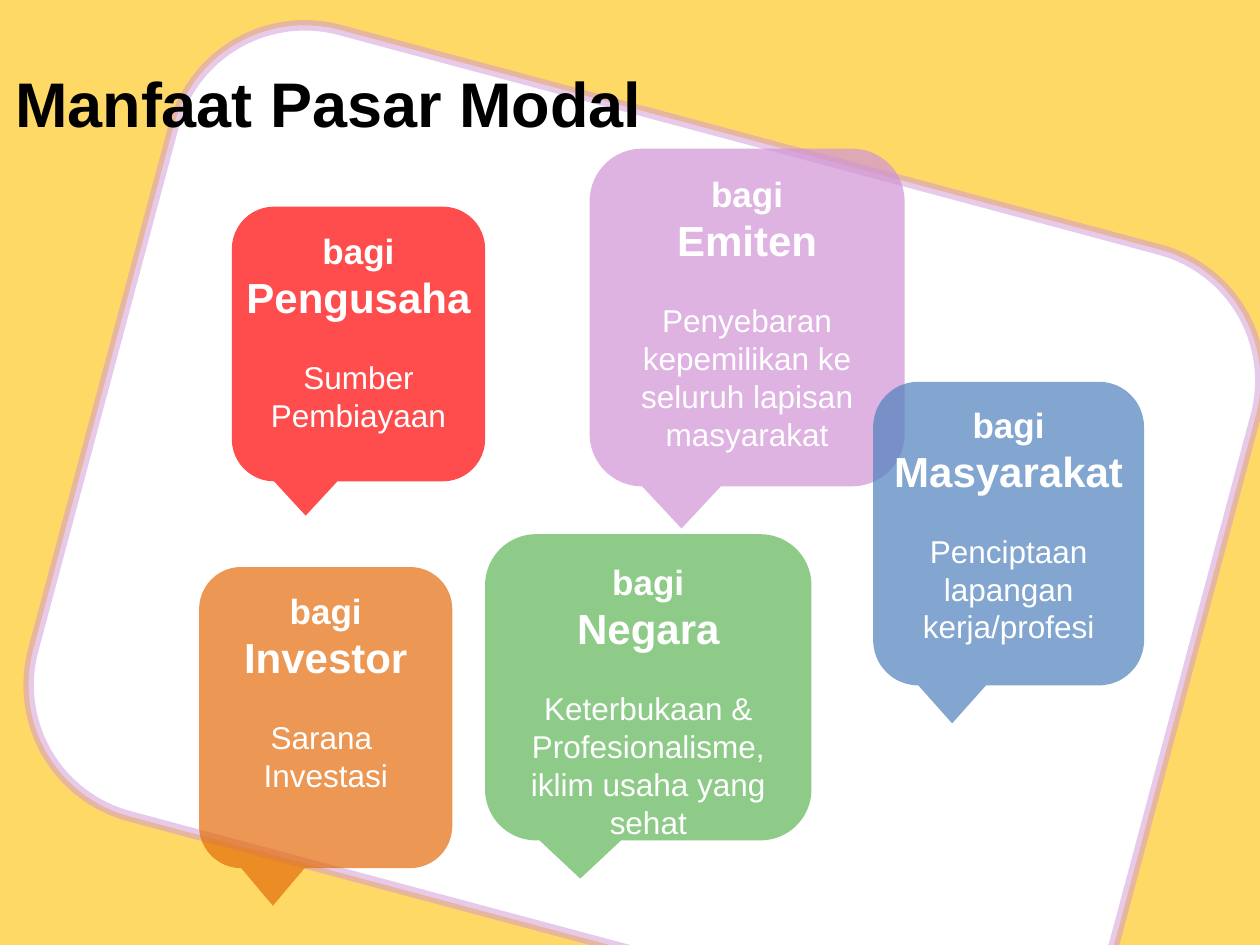
from pptx import Presentation, util as u
from pptx.dml.color import RGBColor
from pptx.enum import shapes, text
from pptx.oxml.ns import qn
from lxml import etree

PX = 9144  # EMU per px, 100 px to the inch
COLOURS = {
    "background": "FFD966", "white": "FFFFFF", "black": "000000",
    "red": "FF0000", "orange": "E46C0A", "lilac": "D094D6",
    "green": "5FB557", "blue": "4F81BD",
}


class SlideBuilder:
    font = "Arial"

    def __init__(self, slide):
        self.slide = slide

    def colour(self, name):
        return RGBColor.from_string(COLOURS[name])

    def place(self, left, top, width, height):
        return [u.Emu(value * PX) for value in (left, top, width, height)]

    def paint(self, fill, name, opacity=100):
        fill.solid()
        fill.fore_color.rgb = self.colour(name)
        if opacity < 100:
            # The public API has no transparency setting
            solid = fill._xPr.find(qn("a:solidFill"))
            alpha = etree.SubElement(solid[0], qn("a:alpha"))
            alpha.set("val", str(opacity * 1000))

    def shape(self, kind, bounds, fill, opacity=100):
        shape = self.slide.shapes.add_shape(kind, *self.place(*bounds))
        shape.shadow.inherit = False
        self.paint(shape.fill, fill, opacity)
        shape.line.fill.background()
        return shape

    def card(self, bounds):
        card = self.shape(shapes.MSO_SHAPE.FLOWCHART_ALTERNATE_PROCESS,
                          bounds, "white")
        card.rotation = 15
        card.line.width = u.Pt(6)
        self.paint(card.line.fill, "lilac", 50)

    def style(self, para, size, name, bold):
        for span in para.runs:
            span.font.name = self.font
            span.font.size = u.Pt(size)
            span.font.bold = bold
            span.font.color.rgb = self.colour(name)

    def title(self, wording, bounds):
        title = self.slide.shapes.title
        title.left, title.top, title.width, title.height = self.place(*bounds)
        frame = title.text_frame
        frame.text = wording
        frame.vertical_anchor = text.MSO_ANCHOR.MIDDLE
        frame.paragraphs[0].alignment = text.PP_ALIGN.LEFT
        self.style(frame.paragraphs[0], 36, "black", True)
        # Bring the title in front of the card
        self.slide.shapes._spTree.append(title._element)

    def callout(self, bounds, fill, inset, text_height, party, benefit):
        left, top, width, _ = bounds
        self.shape(shapes.MSO_SHAPE.ROUNDED_RECTANGULAR_CALLOUT,
                   bounds, fill, 70)
        box = self.slide.shapes.add_textbox(
            *self.place(left, top + inset, width, text_height))
        frame = box.text_frame
        frame.word_wrap = True
        frame.auto_size = text.MSO_AUTO_SIZE.SHAPE_TO_FIT_TEXT
        lines = [("bagi", 20, True), (party, 24, True), (benefit, 18, False)]
        for index, (wording, size, bold) in enumerate(lines):
            para = frame.add_paragraph() if index else frame.paragraphs[0]
            para.text = wording
            para.alignment = text.PP_ALIGN.CENTER
            self.style(para, size, "white", bold)
        frame.paragraphs[-1].space_before = u.Pt(20.7)


def main():
    deck = Presentation()
    deck.slide_width, deck.slide_height = u.Inches(10), u.Inches(7.5)
    page = deck.slides.add_slide(deck.slide_layouts[5])
    builder = SlideBuilder(page)

    # Background, tilted card and title
    builder.paint(page.background.fill, "background")
    builder.card((67, 100, 889, 646))
    builder.title("Manfaat Pasar Modal", (2, 31, 741, 100))

    # Callouts: bounds, fill, text inset, text height, party, benefit
    callouts = [
        ((184, 164, 201, 218), "red", 13, 175,
         "Pengusaha", "Sumber Pembiayaan"),
        ((158, 450, 201, 239), "orange", 13, 175,
         "Investor", "Sarana \vInvestasi"),
        ((468, 118, 250, 268), "lilac", 14, 236,
         "Emiten", "Penyebaran kepemilikan ke seluruh lapisan masyarakat"),
        ((385, 424, 259, 243), "green", 16, 205,
         "Negara", "Keterbukaan & Profesionalisme, iklim usaha yang sehat"),
        ((693, 303, 215, 241), "blue", 12, 205,
         "Masyarakat", "Penciptaan lapangan kerja/profesi"),
    ]
    for callout in callouts:
        builder.callout(*callout)

    deck.save("out.pptx")


if __name__ == "__main__":
    main()
